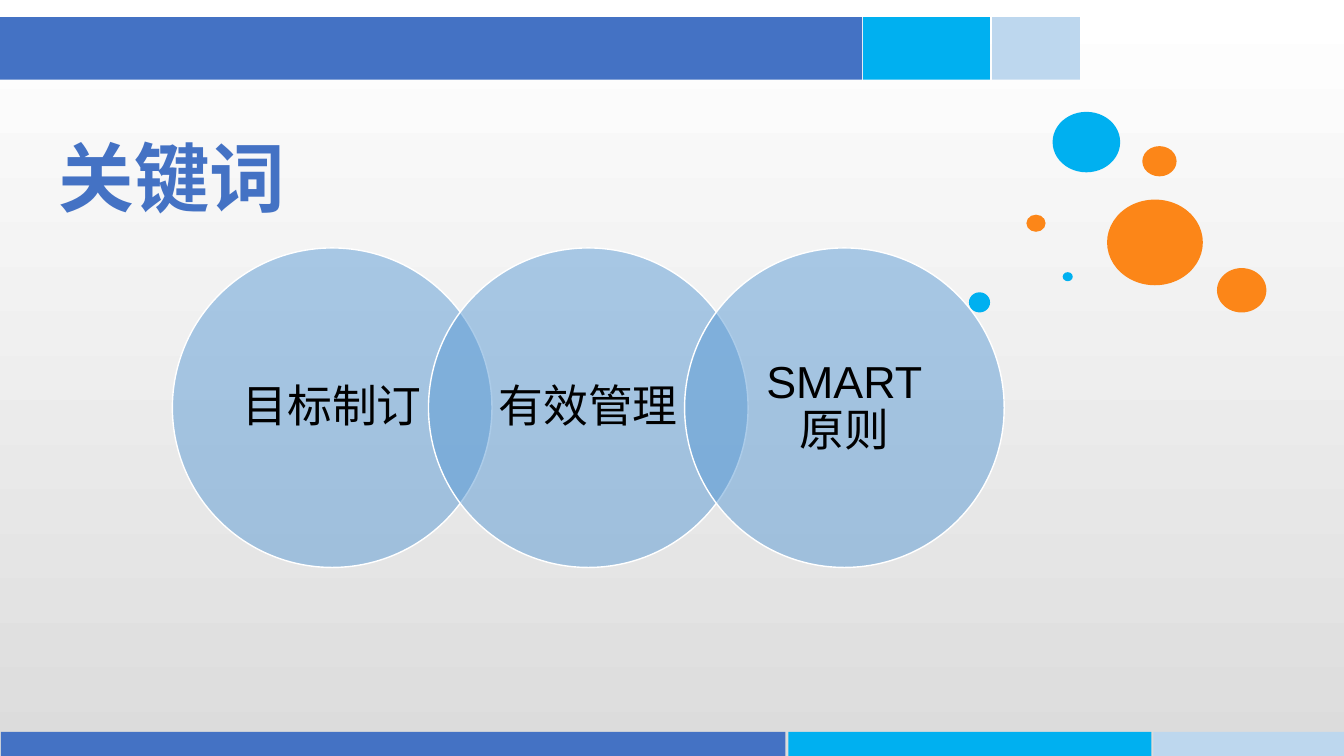
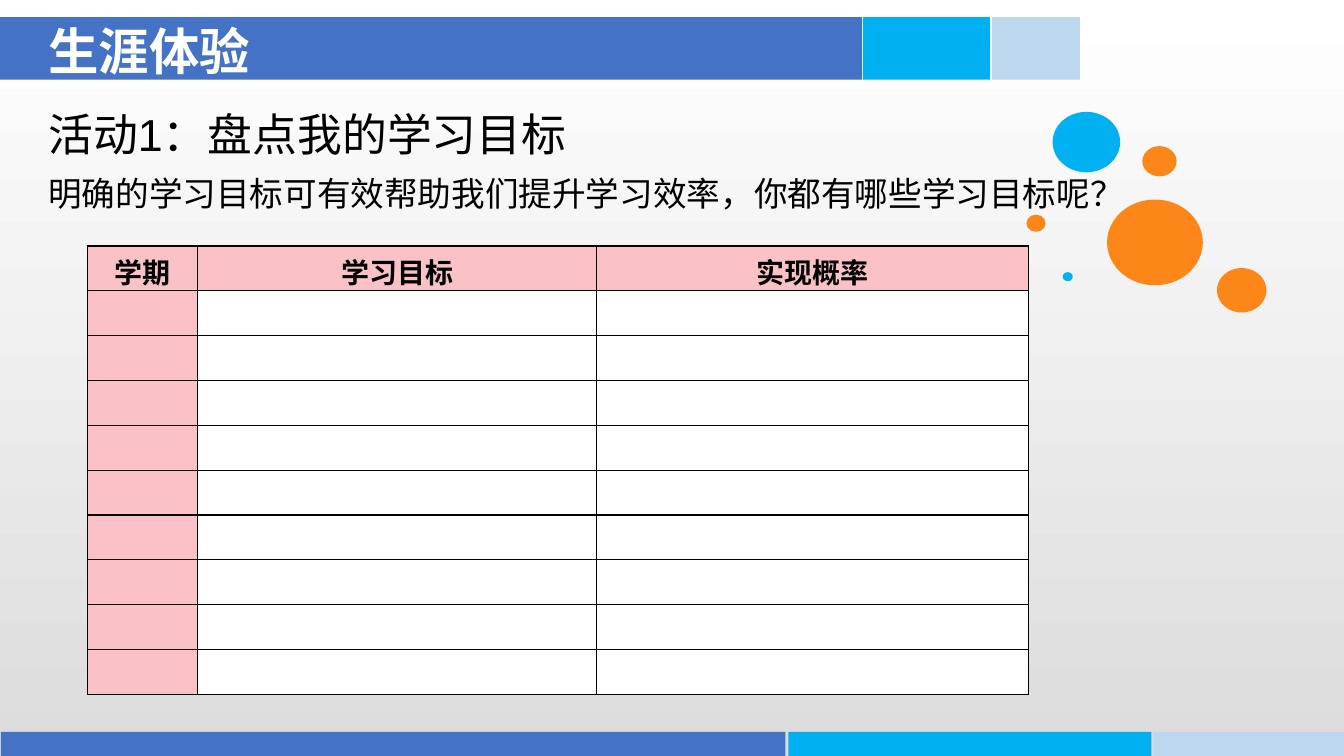
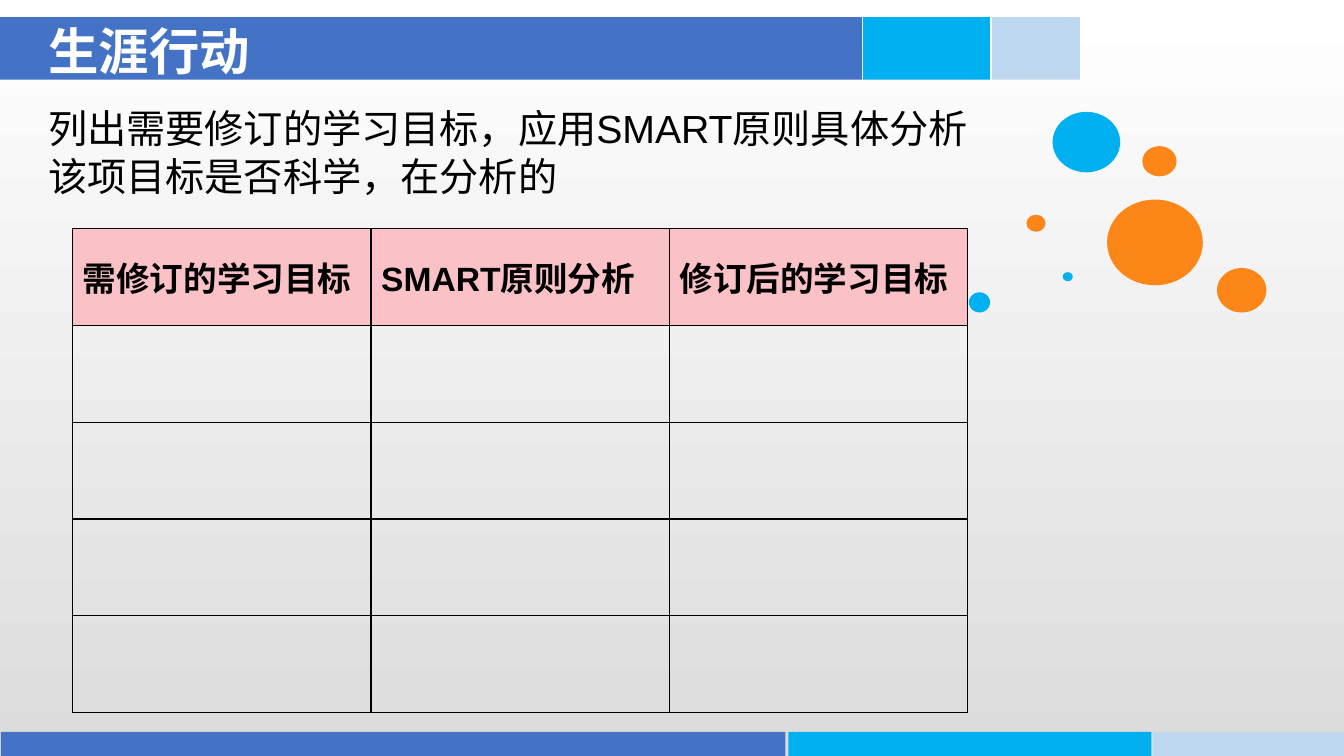
import pptx
import pptx.util
import pptx.dml.color
import pptx.enum.shapes
import pptx.enum.text
import pptx.oxml
import pptx.oxml.ns
import lxml.etree

Inches, Pt = pptx.util.Inches, pptx.util.Pt
SHAPES = pptx.enum.shapes.MSO_SHAPE
ALIGN = pptx.enum.text.PP_ALIGN
ANCHOR = pptx.enum.text.MSO_ANCHOR
AUTO_SIZE = pptx.enum.text.MSO_AUTO_SIZE

# Shared style
BLUE, CYAN, PALE, ORANGE = "4472C4", "00B0F0", "BDD7EE", "FC8618"
BLACK, WHITE, PINK, CIRCLE_BLUE = "000000", "FFFFFF", "FAC2C6", "5B9BD5"
BACKGROUND = [WHITE, "DCDCDC"]
CJK = "Noto Sans CJK SC"

BANDS = [
    (0, 0.17, 8.55, 0.62, BLUE), (8.56, 0.17, 1.26, 0.62, CYAN),
    (9.84, 0.17, 0.87, 0.62, PALE), (0.01, 7.26, 7.78, 0.24, BLUE),
    (7.82, 7.26, 3.6, 0.24, CYAN), (11.44, 7.26, 1.89, 0.24, PALE),
]
BUBBLES = [
    (9.61, 2.9, 0.21, 0.2, CYAN), (10.98, 1.98, 0.95, 0.85, ORANGE),
    (10.44, 1.11, 0.67, 0.6, CYAN), (12.07, 2.66, 0.49, 0.44, ORANGE),
    (11.33, 1.45, 0.34, 0.3, ORANGE), (10.18, 2.13, 0.19, 0.17, ORANGE),
    (10.54, 2.7, 0.1, 0.09, CYAN),
]
BAND_TITLE = {"box": (0.38, 0.24, 3.88, 0.51), "size": 36, "color": WHITE,
              "align": ALIGN.LEFT}
KEYWORD_TITLE = {"box": (0.34, 1.3, 2.73, 1.02), "size": 54, "color": BLUE,
                 "align": ALIGN.CENTER}

# Content
KEYWORDS = ["目标制订", "有效管理", "SMART原则"]
CIRCLE_LEFT, CIRCLE_TOP, CIRCLE_SIZE, CIRCLE_STEP = 1.71, 2.46, 3.17, 2.54

SLIDES = [
    {"title": "关键词", "style": KEYWORD_TITLE, "circles": KEYWORDS},
    {
        "title": "生涯体验", "style": BAND_TITLE,
        "texts": [
            ("活动1：盘点我的学习目标", (0.38, 1.01, 8.14, 0.64), 32, "Arial"),
            ("明确的学习目标可有效帮助我们提升学习效率，你都有哪些学习目标呢？",
             (0.38, 1.67, 10.9, 0.5), 24, CJK),
        ],
        "table": {
            "header": ["学期", "学习目标", "实现概率"],
            "left": 0.87, "top": 2.44, "columns": [1.09, 3.96, 4.28],
            "rows": 10, "row_height": 0.445, "size": 20, "align": ALIGN.CENTER,
            "row_fills": [PINK, WHITE, WHITE],
            "header_format": {"vertical_anchor": ANCHOR.TOP, "margin_bottom": 0},
        },
    },
    {
        "title": "生涯行动", "style": BAND_TITLE,
        "texts": [
            ("列出需要修订的学习目标，应用SMART原则具体分析该项目标是否科学，在分析的",
             (0.38, 0.99, 9.56, 1.04), 28, "Arial"),
        ],
        "table": {
            "header": ["需修订的学习目标", "SMART原则分析", "修订后的学习目标"],
            "left": 0.72, "top": 2.27, "columns": [2.96] * 3,
            "rows": 5, "row_height": 0.96, "size": 24, "align": ALIGN.LEFT,
            "row_fills": [None] * 3,
            "header_format": {"vertical_anchor": ANCHOR.MIDDLE},
        },
    },
]


# Helpers
def rgb(value):
    return pptx.dml.color.RGBColor.from_string(value)


def apply(target, values):
    for name, value in values.items():
        setattr(target, name, value)


def place(shape, box):
    names = ("left", "top", "width", "height")
    apply(shape, dict(zip(names, map(Inches, box))))


def write(frame, text, size, font="Arial", color=BLACK, bold=False,
          align=ALIGN.LEFT, spacing=None):
    paragraph = frame.paragraphs[0]
    apply(paragraph, {"alignment": align, "line_spacing": spacing})
    run = paragraph.add_run()
    run.text = text
    apply(run.font, {"name": font, "size": Pt(size), "bold": bold})
    run.font.color.rgb = rgb(color)
    east_asian = pptx.oxml.parse_xml(
        f'<a:ea {pptx.oxml.ns.nsdecls("a")} typeface="{CJK}"/>')
    run.font._element.find(pptx.oxml.ns.qn("a:latin")).addnext(east_asian)


def add_filled(shapes, kind, box, color):
    shape = shapes.add_shape(kind, *map(Inches, box))
    shape.shadow.inherit = False
    shape.fill.solid()
    shape.fill.fore_color.rgb = rgb(color)
    shape.line.fill.background()
    return shape


def decorate_layout(layout, slide):
    """Build bands and bubbles on a slide, then move them to its layout."""
    fill = layout.background.fill
    fill.gradient()
    fill.gradient_angle = 270
    for stop, color in zip(fill.gradient_stops, BACKGROUND):
        stop.color.rgb = rgb(color)
    parts = [add_filled(slide.shapes, SHAPES.RECTANGLE, band[:4], band[4])
             for band in BANDS]
    group = slide.shapes.add_group_shape()
    for *box, color in BUBBLES:
        add_filled(group.shapes, SHAPES.OVAL, box, color)
    tree = layout.shapes.element
    for part in parts + [group]:
        tree.append(part._element)
    for number, properties in enumerate(tree.xpath(".//p:cNvPr"), 1):
        properties.set("id", str(number))


def add_title(slide, text, style):
    title = slide.shapes.title
    place(title, style["box"])
    apply(title.text_frame, {"vertical_anchor": ANCHOR.MIDDLE, "word_wrap": True,
                             "auto_size": AUTO_SIZE.NONE})
    write(title.text_frame, text, style["size"], CJK, style["color"], True,
          style["align"], 0.9 if style is KEYWORD_TITLE else None)


def add_text(slide, text, box, size, font):
    frame = slide.shapes.add_textbox(*map(Inches, box)).text_frame
    apply(frame, {"word_wrap": True, "auto_size": AUTO_SIZE.SHAPE_TO_FIT_TEXT})
    write(frame, text, size, font)


def add_circles(slide, labels):
    for index, label in enumerate(labels):
        box = (CIRCLE_LEFT + index * CIRCLE_STEP, CIRCLE_TOP,
               CIRCLE_SIZE, CIRCLE_SIZE)
        circle = add_filled(slide.shapes, SHAPES.OVAL, box, CIRCLE_BLUE)
        color = circle._element.spPr.find(".//" + pptx.oxml.ns.qn("a:srgbClr"))
        lxml.etree.SubElement(color, pptx.oxml.ns.qn("a:alpha"), val="50000")
        circle.line.color.rgb = rgb(WHITE)
        circle.line.width = Pt(1)
        apply(circle.text_frame, {
            "word_wrap": True, "vertical_anchor": ANCHOR.MIDDLE,
            "margin_left": Inches(0.17), "margin_right": Inches(0.17),
            "margin_top": Inches(0.04), "margin_bottom": Inches(0.04)})
        write(circle.text_frame, label, 32, align=ALIGN.CENTER, spacing=0.9)


def format_cell(cell, color):
    properties = cell._tc.get_or_add_tcPr()
    for side in "LRTB":
        properties.append(pptx.oxml.parse_xml(
            f'<a:ln{side} {pptx.oxml.ns.nsdecls("a")} w="12700"><a:solidFill>'
            f'<a:srgbClr val="{BLACK}"/></a:solidFill></a:ln{side}>'))
    if color:
        cell.fill.solid()
        cell.fill.fore_color.rgb = rgb(color)
    else:
        cell.fill.background()


def add_grid(slide, data):
    columns, rows = data["columns"], data["rows"]
    box = (data["left"], data["top"], sum(columns), rows * data["row_height"])
    table = slide.shapes.add_table(rows, len(columns), *map(Inches, box)).table
    apply(table, {"first_row": False, "horz_banding": False})
    for column, width in zip(table.columns, columns):
        column.width = Inches(width)
    for index, row in enumerate(table.rows):
        row.height = Inches(data["row_height"])
        for cell, color in zip(row.cells, data["row_fills"]):
            format_cell(cell, color if index else PINK)
    for cell, text in zip(table.rows[0].cells, data["header"]):
        apply(cell, data["header_format"])
        write(cell.text_frame, text, data["size"], bold=True, align=data["align"])


def main():
    presentation = pptx.Presentation()
    apply(presentation, {"slide_width": Inches(13.33), "slide_height": Inches(7.5)})
    layout = presentation.slide_layouts.get_by_name("Title Only")
    for index, content in enumerate(SLIDES):
        slide = presentation.slides.add_slide(layout)
        if index == 0:
            decorate_layout(layout, slide)
        add_title(slide, content["title"], content["style"])
        add_circles(slide, content.get("circles", []))
        for text in content.get("texts", []):
            add_text(slide, *text)
        if "table" in content:
            add_grid(slide, content["table"])
    presentation.save("out.pptx")


if __name__ == "__main__":
    main()
